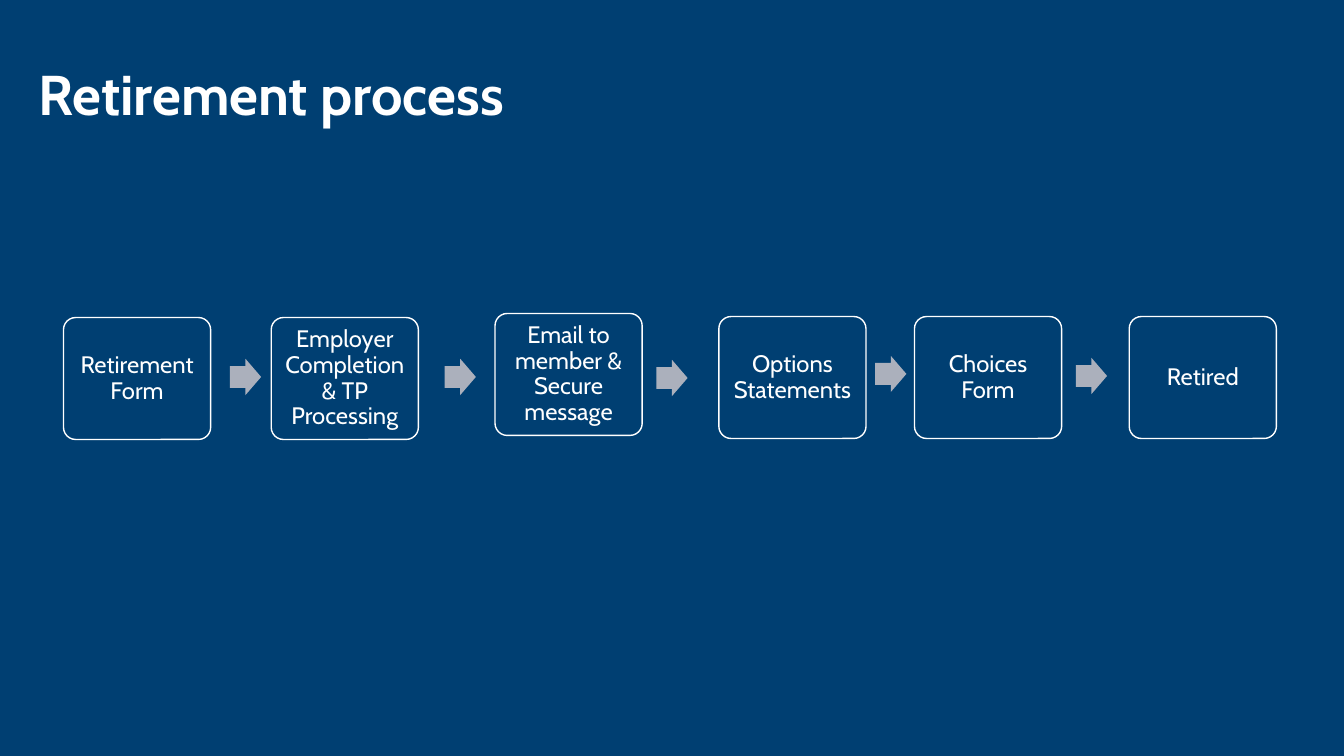
from dataclasses import dataclass

from pptx import Presentation
from pptx.dml.color import RGBColor
from pptx.enum import shapes, text
from pptx.util import Inches, Pt


@dataclass(frozen=True)
class Theme:
    font: str = "Cabin"
    background: RGBColor = RGBColor(0x00, 0x3F, 0x72)
    foreground: RGBColor = RGBColor(0xFF, 0xFF, 0xFF)
    arrow: RGBColor = RGBColor(0xAB, 0xB0, 0xBC)
    title_size: int = 40
    step_size: int = 17
    line_spacing: float = 0.9


class SlideBuilder:
    def __init__(self, prs, theme):
        self.theme = theme
        self.slide = prs.slides.add_slide(prs.slide_layouts[5])
        fill = self.slide.background.fill
        fill.solid()
        fill.fore_color.rgb = theme.background

    def set_text(self, sp, words, size, bold, align, anchor, inset):
        """Put one formatted paragraph into a shape."""
        tf = sp.text_frame
        tf.text = words
        tf.word_wrap = True
        tf.auto_size = text.MSO_AUTO_SIZE.NONE
        tf.vertical_anchor = anchor
        tf.margin_left = tf.margin_right = Inches(inset)
        tf.margin_top = tf.margin_bottom = Inches(inset)
        p = tf.paragraphs[0]
        p.alignment = align
        p.line_spacing = self.theme.line_spacing
        font = p.runs[0].font
        font.name = self.theme.font
        font.size = Pt(size)
        font.bold = bold
        font.color.rgb = self.theme.foreground

    def title(self, words, left, top, width, height):
        sp = self.slide.shapes.title
        sp.left, sp.top = Inches(left), Inches(top)
        sp.width, sp.height = Inches(width), Inches(height)
        self.set_text(sp, words, self.theme.title_size, True,
                      text.PP_ALIGN.LEFT, text.MSO_ANCHOR.BOTTOM, 0)

    def shape(self, kind, left, top, width, height, color):
        sp = self.slide.shapes.add_shape(
            kind, Inches(left), Inches(top), Inches(width), Inches(height))
        sp.shadow.inherit = False
        sp.fill.solid()
        sp.fill.fore_color.rgb = color
        return sp

    def step(self, words, left, top):
        sp = self.shape(shapes.MSO_SHAPE.ROUNDED_RECTANGLE,
                        left, top, 1.46, 1.21, self.theme.background)
        sp.adjustments[0] = 0.1
        sp.line.color.rgb = self.theme.foreground
        sp.line.width = Pt(1)
        self.set_text(sp, words, self.theme.step_size, False,
                      text.PP_ALIGN.CENTER, text.MSO_ANCHOR.MIDDLE, 0.07)

    def arrow(self, left, top):
        sp = self.shape(shapes.MSO_SHAPE.RIGHT_ARROW,
                        left, top, 0.31, 0.36, self.theme.arrow)
        sp.adjustments[0] = 0.6
        sp.adjustments[1] = 0.5
        sp.line.fill.background()


STEPS = [
    ("Retirement Form", 0.63, 3.15),
    ("Employer Completion & TP Processing", 2.69, 3.15),
    ("Email to member & Secure message", 4.91, 3.11),
    ("Options Statements", 7.13, 3.14),
    ("Choices Form", 9.07, 3.14),
    ("Retired", 11.2, 3.14),
]
ARROWS = [(2.28, 3.56), (4.41, 3.56), (6.51, 3.57), (8.68, 3.53), (10.67, 3.55)]


def main():
    prs = Presentation()
    prs.slide_width, prs.slide_height = Inches(13.33), Inches(7.5)
    builder = SlideBuilder(prs, Theme())
    builder.title("Retirement process", 0.38, 0.61, 5.72, 0.66)
    for words, left, top in STEPS:
        builder.step(words, left, top)
    for left, top in ARROWS:
        builder.arrow(left, top)
    prs.save("out.pptx")


if __name__ == "__main__":
    main()
